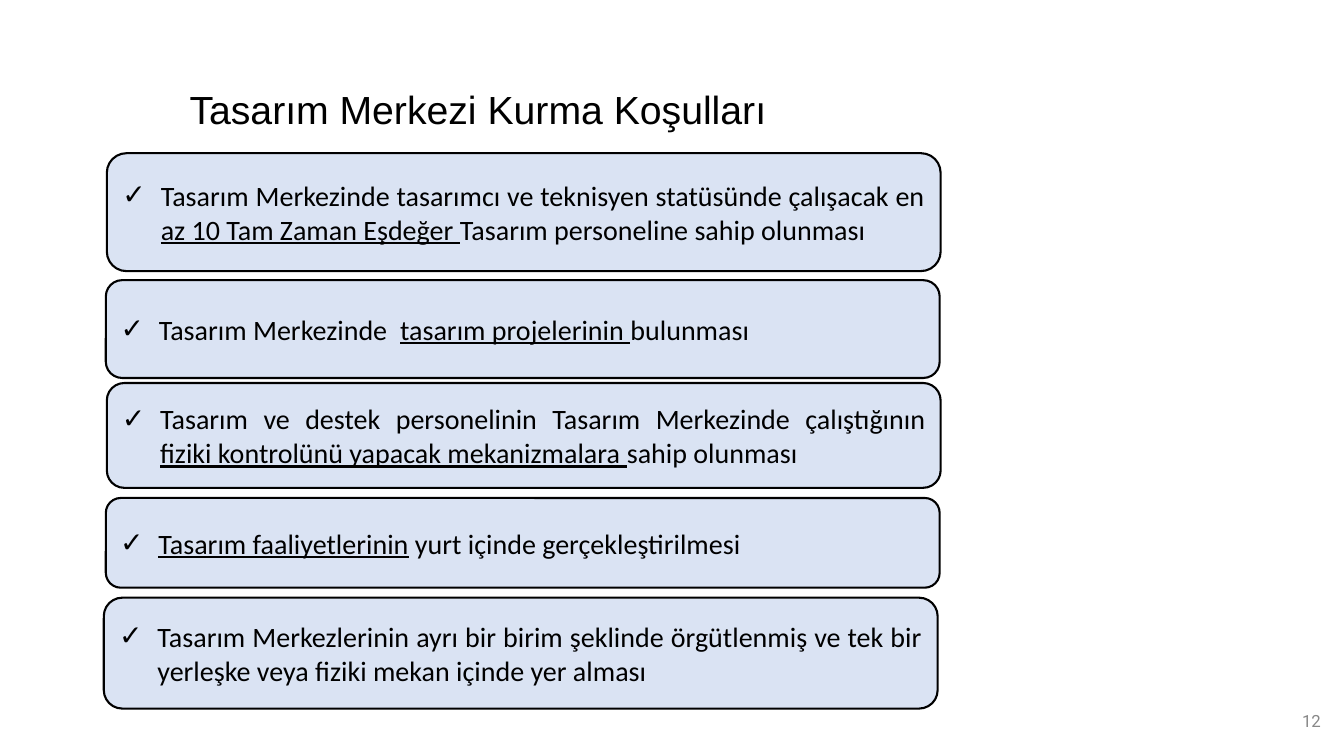
from lxml.etree import SubElement
from pptx import Presentation
from pptx.dml.color import RGBColor
from pptx.enum.shapes import MSO_SHAPE
from pptx.enum.text import MSO_ANCHOR, PP_ALIGN
from pptx.oxml.ns import qn
from pptx.util import Emu, Pt

PX = 9144  # 100 px to the inch
BLACK = RGBColor(0x00, 0x00, 0x00)
GREY = RGBColor(0x88, 0x88, 0x88)
PALE_BLUE = RGBColor(0xDA, 0xE3, 0xF3)
CARD_WIDTH = 827
INDENT = 38

# Each condition: left, top, height, then (text, underlined) runs
CONDITIONS = [
    (106, 152, 117, [
        ("Tasarım Merkezinde tasarımcı ve teknisyen statüsünde çalışacak en ", False),
        ("az 10 Tam Zaman Eşdeğer ", True),
        ("Tasarım personeline sahip olunması", False)]),
    (105, 278, 97, [
        ("Tasarım Merkezinde  ", False),
        ("tasarım projelerinin ", True),
        ("bulunması", False)]),
    (106, 380, 104, [
        ("Tasarım ve destek personelinin Tasarım Merkezinde çalıştığının ", False),
        ("fiziki kontrolünü yapacak mekanizmalara ", True),
        ("sahip olunması", False)]),
    (105, 494, 89, [
        ("Tasarım faaliyetlerinin", True),
        (" yurt içinde gerçekleştirilmesi", False)]),
    (103, 593, 110, [
        ("Tasarım Merkezlerinin ayrı bir birim şeklinde örgütlenmiş ve tek bir "
         "yerleşke veya fiziki mekan içinde yer alması", False)]),
]


def px(length):
    return Emu(length * PX)


def add_span(para, text, font, size, color, underline=False):
    span = para.add_run()
    span.text = text
    span.font.name = font
    span.font.size = Pt(size)
    span.font.color.rgb = color
    span.font.underline = underline


def add_check_bullet(para):
    properties = para._p.get_or_add_pPr()
    properties.set("marL", str(px(INDENT)))
    properties.set("indent", str(-px(INDENT)))
    color = SubElement(properties, qn("a:buClr"))
    SubElement(color, qn("a:srgbClr"), val=str(BLACK))
    SubElement(properties, qn("a:buFont"), typeface="Arial")
    SubElement(properties, qn("a:buChar"), char="✓")


def add_title(page, text):
    title = page.shapes.title
    title.left, title.top, title.width, title.height = map(px, (178, 80, 646, 57))
    frame = title.text_frame
    frame.vertical_anchor = MSO_ANCHOR.TOP
    frame.word_wrap = True
    para = frame.paragraphs[0]
    para.alignment = PP_ALIGN.LEFT
    add_span(para, text, "Arial", 28, BLACK)


def add_condition(page, left, top, height, spans):
    card = page.shapes.add_shape(MSO_SHAPE.ROUNDED_RECTANGLE,
                                 px(left), px(top), px(CARD_WIDTH), px(height))
    card.shadow.inherit = False
    card.fill.solid()
    card.fill.fore_color.rgb = PALE_BLUE
    card.line.color.rgb = BLACK
    card.line.width = Pt(1.5)
    frame = card.text_frame
    frame.word_wrap = True
    frame.vertical_anchor = MSO_ANCHOR.MIDDLE
    para = frame.paragraphs[0]
    para.alignment = PP_ALIGN.JUSTIFY
    add_check_bullet(para)
    for text, underline in spans:
        add_span(para, text, "Calibri", 20, BLACK, underline)


def add_page_number(page, number):
    box = page.shapes.add_textbox(px(1020), px(695), px(300), px(40))
    frame = box.text_frame
    frame.word_wrap = True
    frame.vertical_anchor = MSO_ANCHOR.MIDDLE
    para = frame.paragraphs[0]
    para.alignment = PP_ALIGN.RIGHT
    add_span(para, number, "Roboto", 12, GREY)


def main():
    deck = Presentation()
    deck.slide_width, deck.slide_height = px(1333), px(750)
    page = deck.slides.add_slide(deck.slide_layouts[5])  # title only

    add_title(page, "Tasarım Merkezi Kurma Koşulları")
    for condition in CONDITIONS:
        add_condition(page, *condition)
    add_page_number(page, "12")

    deck.save("out.pptx")


if __name__ == "__main__":
    main()
